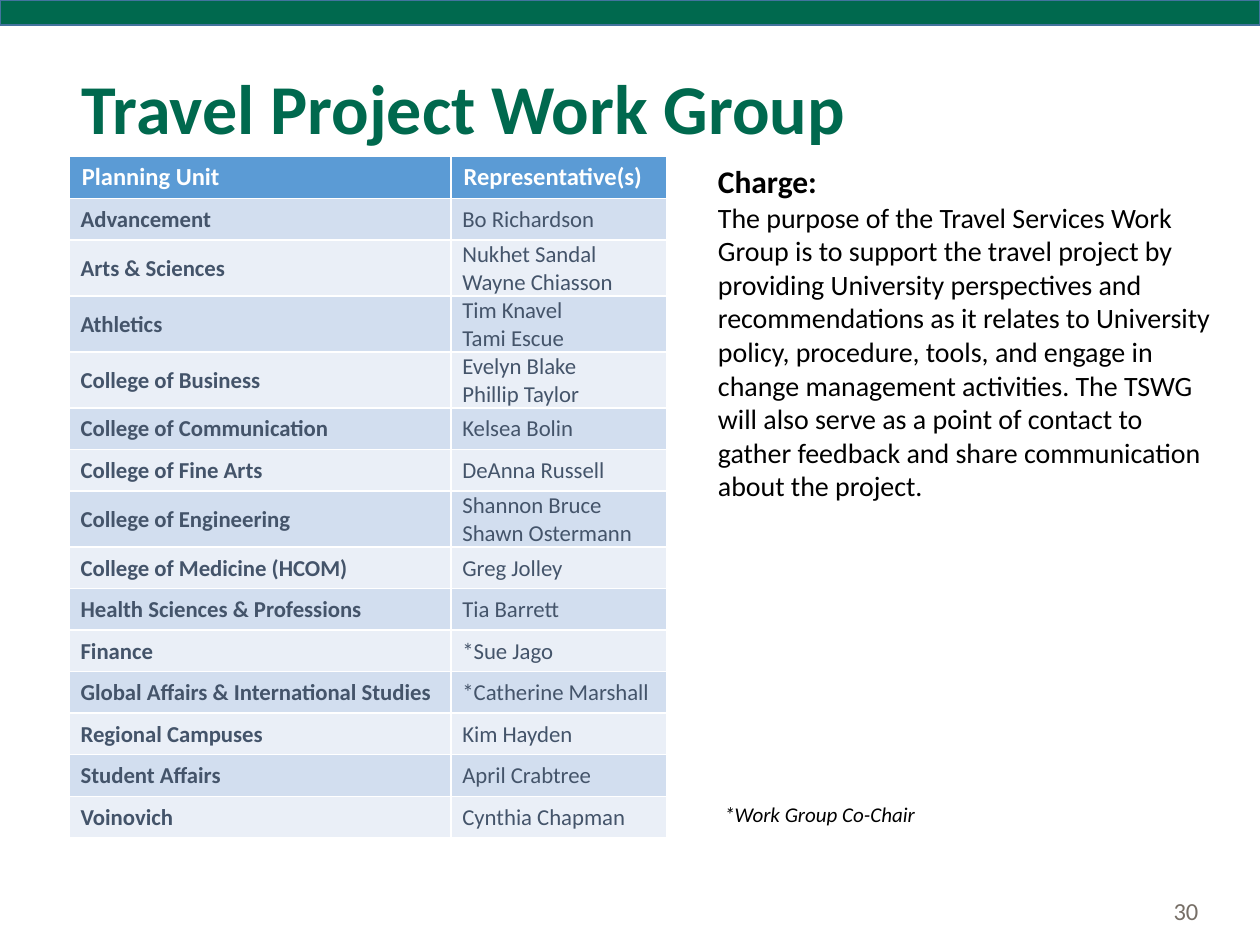
from dataclasses import dataclass

from pptx import Presentation
from pptx.dml.color import RGBColor as Rgb
from pptx.enum.shapes import MSO_SHAPE as Shape
from pptx.enum.text import MSO_ANCHOR as Anchor, MSO_AUTO_SIZE as Fit, PP_ALIGN as Align
from pptx.util import Inches, Pt


@dataclass(frozen=True)
class Theme:
    """Colours, type sizes and font of the slide."""
    font: str = "Calibri"
    green: str = "00694E"
    edge: str = "43739E"
    header: str = "5B9BD5"
    bands: tuple = ("D2DEEF", "EAEFF7")
    slate: str = "44546A"
    grey: str = "776F67"
    black: str = "000000"
    white: str = "FFFFFF"
    title: int = 40
    heading: int = 18
    body: int = 16
    label: int = 14
    cell: int = 13
    note: int = 12


THEME = Theme()
HEADINGS = ("Planning Unit", "Representative(s)")
MEMBERS = (
    ("Advancement", "Bo Richardson"),
    ("Arts & Sciences", "Nukhet Sandal\vWayne Chiasson"),
    ("Athletics", "Tim Knavel\vTami Escue"),
    ("College of Business", "Evelyn Blake\nPhillip Taylor"),
    ("College of Communication", "Kelsea Bolin"),
    ("College of Fine Arts", "DeAnna Russell"),
    ("College of Engineering", "Shannon Bruce\vShawn Ostermann"),
    ("College of Medicine (HCOM)", "Greg Jolley"),
    ("Health Sciences & Professions", "Tia Barrett"),
    ("Finance", "*Sue Jago"),
    ("Global Affairs & International Studies", "*Catherine Marshall"),
    ("Regional Campuses", "Kim Hayden"),
    ("Student Affairs", "April Crabtree"),
    ("Voinovich", "Cynthia Chapman"),
)
CHARGE = (
    "The purpose of the Travel Services Work Group is to support the travel project by "
    "providing University perspectives and recommendations as it relates to University "
    "policy, procedure, tools, and engage in change management activities. The TSWG will "
    "also serve as a point of contact to gather feedback and share communication about "
    "the project."
)


def apply(target, **values):
    """Set each given attribute on the target."""
    for name, value in values.items():
        setattr(target, name, value)


def style(para, size, color, **values):
    """Give every run of a paragraph its font, size and colour."""
    for span in para.runs:
        apply(span.font, name=THEME.font, size=Pt(size), **values)
        span.font.color.rgb = Rgb.from_string(color)


def paint(target, color):
    """Fill a shape or cell with one colour."""
    target.fill.solid()
    target.fill.fore_color.rgb = Rgb.from_string(color)


def add_text(page, box, lines, **frame_values):
    """Add a text box holding (text, size, colour, font values) lines."""
    frame = page.shapes.add_textbox(*map(Inches, box)).text_frame
    apply(frame, **{"word_wrap": True, **frame_values})
    frame.text = "\n".join(line[0] for line in lines)
    for para, (_, size, color, values) in zip(frame.paragraphs, lines):
        style(para, size, color, **values)
    return frame


def add_banner(page, box):
    """Draw the green strip across the top."""
    banner = page.shapes.add_shape(Shape.RECTANGLE, *map(Inches, box))
    banner.shadow.inherit = False
    paint(banner, THEME.green)
    banner.line.color.rgb = Rgb.from_string(THEME.edge)
    banner.line.width = Pt(1)


def add_title(page, box, text):
    """Place and format the title placeholder."""
    title = page.shapes.title
    apply(title, **dict(zip(("left", "top", "width", "height"), map(Inches, box))))
    frame = title.text_frame
    frame.text = text
    apply(frame, vertical_anchor=Anchor.MIDDLE, auto_size=Fit.NONE, word_wrap=True)
    para = frame.paragraphs[0]
    apply(para, alignment=Align.LEFT, line_spacing=0.9)
    style(para, THEME.title, THEME.green, bold=True)


def add_members(page, box):
    """Build the table of planning units and their representatives."""
    rows = (HEADINGS, *MEMBERS)
    table = page.shapes.add_table(len(rows), 2, *map(Inches, box)).table
    unit_width = 3.03
    for column, width in zip(table.columns, (unit_width, box[2] - unit_width)):
        column.width = Inches(width)
    insets = dict(margin_left=Inches(0.09), margin_top=Inches(0.01),
                  margin_right=Inches(0.01), margin_bottom=0,
                  vertical_anchor=Anchor.MIDDLE)
    for index, texts in enumerate(rows):
        is_header = index == 0
        two_lines = len(texts[1].splitlines()) > 1
        table.rows[index].height = Inches(0.43 if two_lines else 0.33)
        for column, text in enumerate(texts):
            cell = table.cell(index, column)
            cell.text_frame.text = text
            paint(cell, THEME.header if is_header else THEME.bands[(index - 1) % 2])
            if not is_header:
                apply(cell, **insets)
            for para in cell.text_frame.paragraphs:
                style(para, THEME.label if is_header else THEME.cell,
                      THEME.white if is_header else THEME.slate,
                      bold=is_header or column == 0)


def add_charge(page, box):
    """Write the charge of the work group."""
    add_text(page, box, [("Charge:", THEME.heading, THEME.black, {"bold": True}),
                         (CHARGE, THEME.body, THEME.black, {"bold": False})])


def add_note(page, box):
    """Write the footnote that explains the asterisk."""
    add_text(page, box, [("*Work Group Co-Chair", THEME.note, THEME.black, {"italic": True})],
             word_wrap=False)


def add_page_number(page, box):
    """Write the page number at the bottom right."""
    frame = add_text(page, box, [("30", THEME.label, THEME.grey, {})],
                     vertical_anchor=Anchor.MIDDLE)
    frame.paragraphs[0].alignment = Align.RIGHT


def main():
    """Build the slide and save the deck."""
    deck = Presentation()
    apply(deck, slide_width=Inches(10), slide_height=Inches(7.5))
    page = deck.slides.add_slide(deck.slide_layouts[5])
    add_page_number(page, (6.61, 7.03, 3, 0.4))
    add_banner(page, (0, 0, 10, 0.2))
    add_note(page, (5.65, 6.31, 1.89, 0.3))
    add_charge(page, (5.6, 1.24, 4.14, 2.83))
    add_members(page, (0.55, 1.24, 4.74, 5.37))
    add_title(page, (0.55, 0.16, 10.2, 1.45), "Travel Project Work Group")
    deck.save("out.pptx")


if __name__ == "__main__":
    main()
